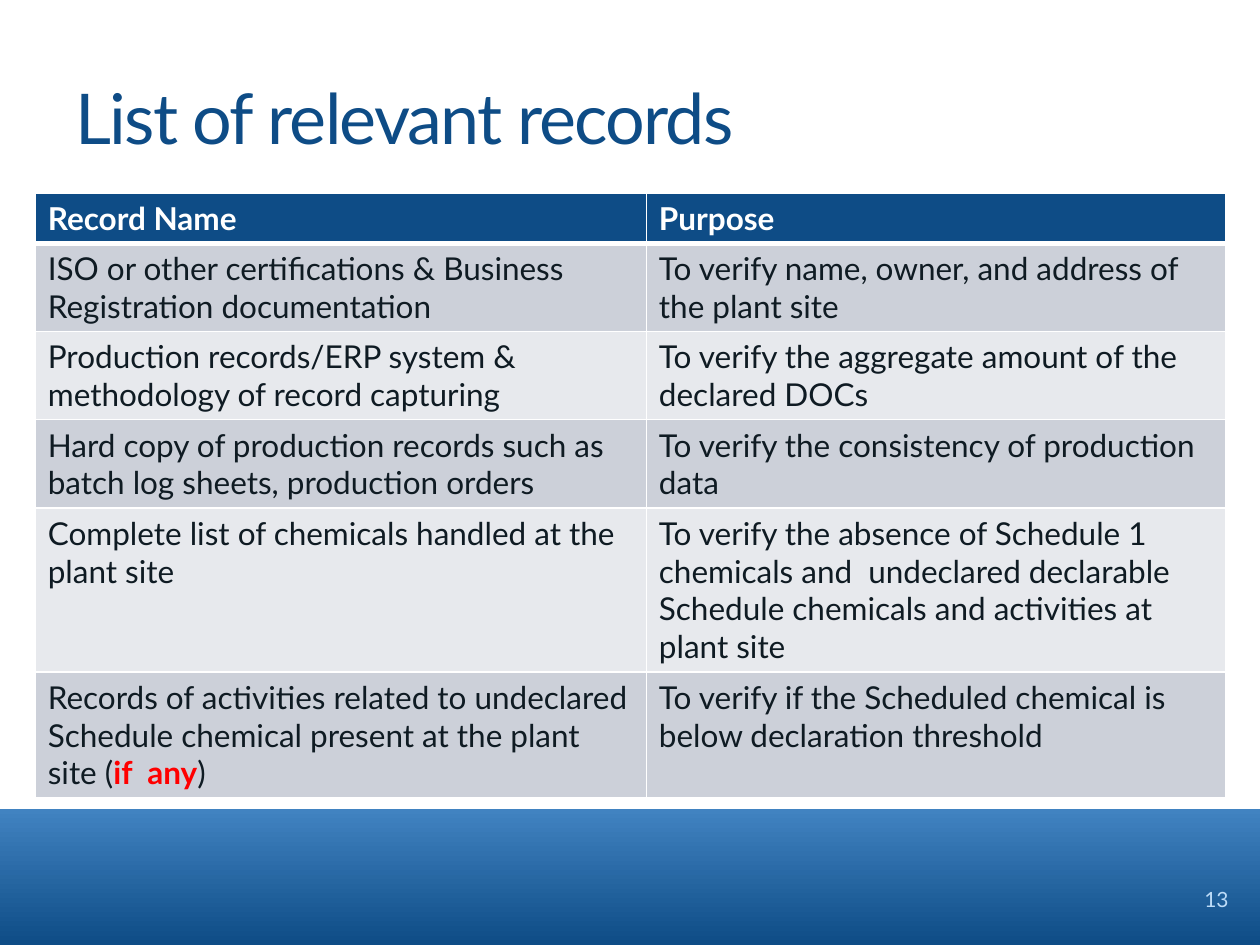
from dataclasses import dataclass

from lxml import etree
from pptx import Presentation
from pptx.dml.color import RGBColor
from pptx.enum.shapes import MSO_SHAPE
from pptx.enum.text import MSO_ANCHOR, PP_ALIGN
from pptx.oxml.ns import qn
from pptx.util import Inches, Pt

RECT = MSO_SHAPE.RECTANGLE
BRACKETS = MSO_SHAPE.DOUBLE_BRACKET
MIDDLE = MSO_ANCHOR.MIDDLE
LEFT, RIGHT = PP_ALIGN.LEFT, PP_ALIGN.RIGHT
TITLE_ONLY = 5


@dataclass(frozen=True)
class Theme:
    """Colours, font and type sizes of the slide."""
    font: str = "Lato"
    navy: str = "0E4C86"
    blue: str = "4183C1"
    pale: str = "BDDCF8"
    ink: str = "0F1B23"
    alert: str = "FF0000"
    white: str = "FFFFFF"
    bands: tuple = ("CCD0D9", "E7E9ED")
    title_size: int = 40
    table_size: int = 18
    number_size: int = 12


THEME = Theme()
WIDTH, HEIGHT = Inches(10), Inches(7.5)
COLUMNS = (4.85, 4.6)
LINE_HEIGHT, CELL_PADDING = 0.3, 0.1
HEADER = ("Record Name", "Purpose")
RECORDS = (
    (2, "ISO or other certifications & Business Registration documentation",
     "To verify name, owner, and address of the plant site"),
    (2, "Production records/ERP system & methodology of record capturing",
     "To verify the aggregate amount of the declared DOCs"),
    (2, "Hard copy of production records such as batch log sheets, production orders",
     "To verify the consistency of production data"),
    (4, "Complete list of chemicals handled at the plant site",
     "To verify the absence of Schedule 1 chemicals and  undeclared declarable "
     "Schedule chemicals and activities at plant site"),
    (3, ("Records of activities related to undeclared Schedule chemical present "
         "at the plant site (", "if  any", ")"),
     "To verify if the Scheduled chemical is below declaration threshold"),
)


def rgb(color):
    """Turn a hex string into a colour."""
    return RGBColor.from_string(color)


def add_run(p, text, size, color, bold=False):
    """Add one formatted run to a paragraph."""
    r = p.add_run()
    r.text = text
    r.font.name, r.font.size, r.font.bold = THEME.font, Pt(size), bold
    r.font.color.rgb = rgb(color)
    return r


def add_plain_shape(slide, kind, *box):
    """Add a preset shape without line or shadow."""
    sp = slide.shapes.add_shape(kind, *(Inches(v) for v in box))
    sp.shadow.inherit = False
    sp.line.fill.background()
    return sp


def add_band(slide):
    """Add the gradient band along the foot of the slide."""
    fill = add_plain_shape(slide, RECT, 0, 6.42, 10, 1.08).fill
    fill.gradient()
    fill.gradient_angle = 270
    for stop, color, place in zip(fill.gradient_stops, (THEME.blue, THEME.navy), (0, 1)):
        stop.color.rgb, stop.position = rgb(color), place


def add_number(slide, text):
    """Add the slide number on the band."""
    sp = add_plain_shape(slide, BRACKETS, 9.02, 6.96, 0.83, 0.35)
    sp.adjustments[0] = 0
    sp.fill.background()
    tf = sp.text_frame
    tf.vertical_anchor = MIDDLE
    p = tf.paragraphs[0]
    p.alignment = RIGHT
    add_run(p, text, THEME.number_size, THEME.pale)


def set_title(slide, text):
    """Place and format the title placeholder."""
    sp = slide.shapes.title
    sp.left, sp.top, sp.width, sp.height = (Inches(v) for v in (0.5, 0.3, 8.91, 1.25))
    tf = sp.text_frame
    tf.vertical_anchor = MIDDLE
    p = tf.paragraphs[0]
    p.alignment = LEFT
    r = add_run(p, text, THEME.title_size, THEME.navy)
    r.font._element.set("spc", "-100")


def set_borders(cell, top, bottom):
    """Draw white cell borders with the given top and bottom widths."""
    tc_pr = cell._tc.get_or_add_tcPr()
    for side, width in (("L", 1), ("R", 1), ("T", top), ("B", bottom)):
        ln = etree.SubElement(tc_pr, qn(f"a:ln{side}"), w=str(Pt(width)))
        fill = etree.SubElement(ln, qn("a:solidFill"))
        etree.SubElement(fill, qn("a:srgbClr"), val=THEME.white)


def fill_cell(cell, content, row):
    """Style a cell and write its runs, every second one as an alert."""
    set_borders(cell, 3 if row == 1 else 1, 1 if row else 3)
    cell.fill.solid()
    cell.fill.fore_color.rgb = rgb(THEME.bands[(row - 1) % 2] if row else THEME.navy)
    color = THEME.ink if row else THEME.white
    runs = (content,) if isinstance(content, str) else content
    for i, text in enumerate(runs):
        alert = i % 2 == 1
        add_run(cell.text_frame.paragraphs[0], text, THEME.table_size,
                THEME.alert if alert else color, alert or row == 0)


def add_records(slide):
    """Add the table of records, with row heights set by line count."""
    rows = ((1, *HEADER), *RECORDS)
    heights = [Inches(CELL_PADDING + LINE_HEIGHT * lines) for lines, *_ in rows]
    table = slide.shapes.add_table(len(rows), len(COLUMNS), Inches(0.28), Inches(1.53),
                                   Inches(sum(COLUMNS)), sum(heights)).table
    for column, width in zip(table.columns, COLUMNS):
        column.width = Inches(width)
    for i, (_, *contents) in enumerate(rows):
        table.rows[i].height = heights[i]
        for j, content in enumerate(contents):
            fill_cell(table.cell(i, j), content, i)


def main():
    """Build and save the slide."""
    prs = Presentation()
    prs.slide_width, prs.slide_height = WIDTH, HEIGHT
    s = prs.slides.add_slide(prs.slide_layouts[TITLE_ONLY])
    add_band(s)
    add_number(s, "13")
    set_title(s, "List of relevant records")
    add_records(s)
    prs.save("out.pptx")


if __name__ == "__main__":
    main()
